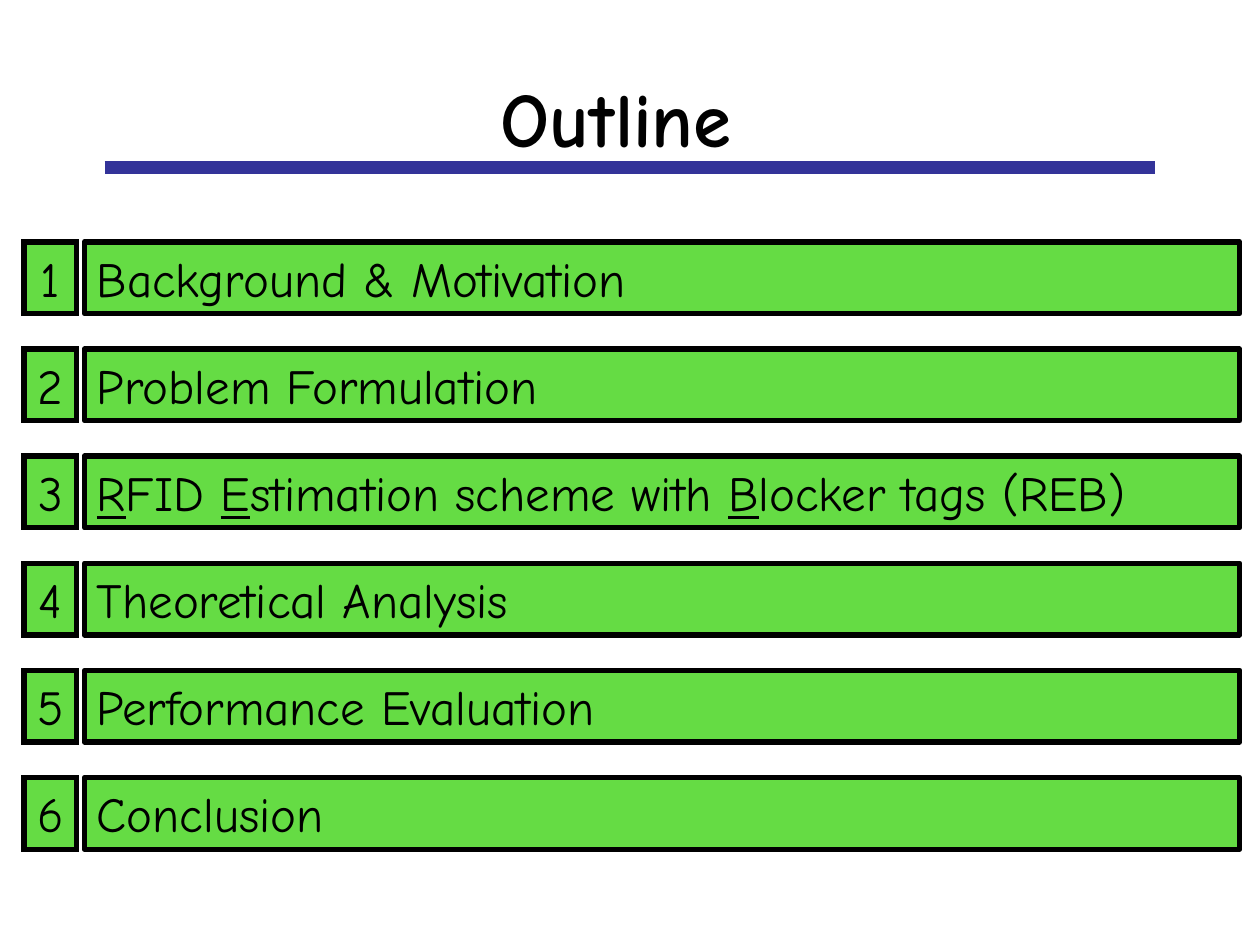
from dataclasses import dataclass

import pptx
import pptx.dml.color
import pptx.enum.shapes
import pptx.enum.text
import pptx.oxml.ns
import pptx.util
from lxml import etree
from pptx.util import Inches

COLORS = {"text": "000000", "bar": "65DC44", "border": "000000", "rule": "333399"}
FONT = "Comic Neue"
ALIGN = pptx.enum.text.PP_ALIGN
ANCHOR = pptx.enum.text.MSO_ANCHOR

FIRST_TOP, ROW_STEP, BOX_HEIGHT = 1.92, 0.85, 0.57


@dataclass(frozen=True)
class Column:
    left: float
    width: float
    align: ALIGN
    mitered: bool


@dataclass(frozen=True)
class Piece:
    text: str
    underline: bool = False


NUMBER = Column(0.19, 0.42, ALIGN.CENTER, True)
TOPIC = Column(0.67, 9.17, ALIGN.LEFT, False)

TOPICS = [
    [Piece("Background & Motivation")],
    [Piece("Problem Formulation")],
    [
        Piece("R", True), Piece("FID "),
        Piece("E", True), Piece("stimation scheme with "),
        Piece("B", True), Piece("locker tags (REB)"),
    ],
    [Piece("Theoretical Analysis")],
    [Piece("Performance Evaluation")],
    [Piece("Conclusion")],
]


def rgb(name: str) -> pptx.dml.color.RGBColor:
    return pptx.dml.color.RGBColor.from_string(COLORS[name])


def format_run(r, size: float, bold: bool = False) -> None:
    r.font.name = FONT
    r.font.size = pptx.util.Pt(size)
    r.font.bold = bold
    r.font.color.rgb = rgb("text")


def add_title(s, text: str) -> None:
    sp = s.shapes.title
    sp.left, sp.top = Inches(0.5), Inches(0.3)
    sp.width, sp.height = Inches(9), Inches(1.25)
    tf = sp.text_frame
    tf.text = text
    tf.vertical_anchor = ANCHOR.MIDDLE
    p = tf.paragraphs[0]
    p.alignment = ALIGN.CENTER
    format_run(p.runs[0], 44, bold=True)


def add_rule(s) -> None:
    """Draw the thick line under the title."""
    line = s.shapes.add_connector(
        pptx.enum.shapes.MSO_CONNECTOR.STRAIGHT,
        Inches(0.83), Inches(1.33), Inches(9.17), Inches(1.33),
    )
    line.line.color.rgb = rgb("rule")
    line.line.width = pptx.util.Pt(7)
    etree.SubElement(line._element.spPr, pptx.oxml.ns.qn("a:effectLst"))


def add_box(s, column: Column, row: int, pieces: list[Piece]) -> None:
    sp = s.shapes.add_shape(
        pptx.enum.shapes.MSO_SHAPE.RECTANGLE,
        Inches(column.left), Inches(FIRST_TOP + row * ROW_STEP),
        Inches(column.width), Inches(BOX_HEIGHT),
    )
    sp.shadow.inherit = False
    sp.fill.solid()
    sp.fill.fore_color.rgb = rgb("bar")
    sp.line.color.rgb = rgb("border")
    sp.line.width = pptx.util.Pt(3)
    if column.mitered:
        ln = sp._element.spPr.find(pptx.oxml.ns.qn("a:ln"))
        etree.SubElement(ln, pptx.oxml.ns.qn("a:miter"), lim="800000")

    tf = sp.text_frame
    tf.word_wrap = True
    tf.auto_size = pptx.enum.text.MSO_AUTO_SIZE.SHAPE_TO_FIT_TEXT
    tf.vertical_anchor = ANCHOR.TOP
    p = tf.paragraphs[0]
    p.alignment = column.align
    for piece in pieces:
        r = p.add_run()
        r.text = piece.text
        format_run(r, 28)
        r.font.underline = piece.underline


def main() -> None:
    prs = pptx.Presentation()
    prs.slide_width, prs.slide_height = Inches(10), Inches(7.5)
    s = prs.slides.add_slide(prs.slide_layouts[5])
    add_rule(s)
    add_title(s, "Outline ")
    for row, pieces in enumerate(TOPICS):
        add_box(s, TOPIC, row, pieces)
        add_box(s, NUMBER, row, [Piece(str(row + 1))])
    prs.save("out.pptx")


if __name__ == "__main__":
    main()
